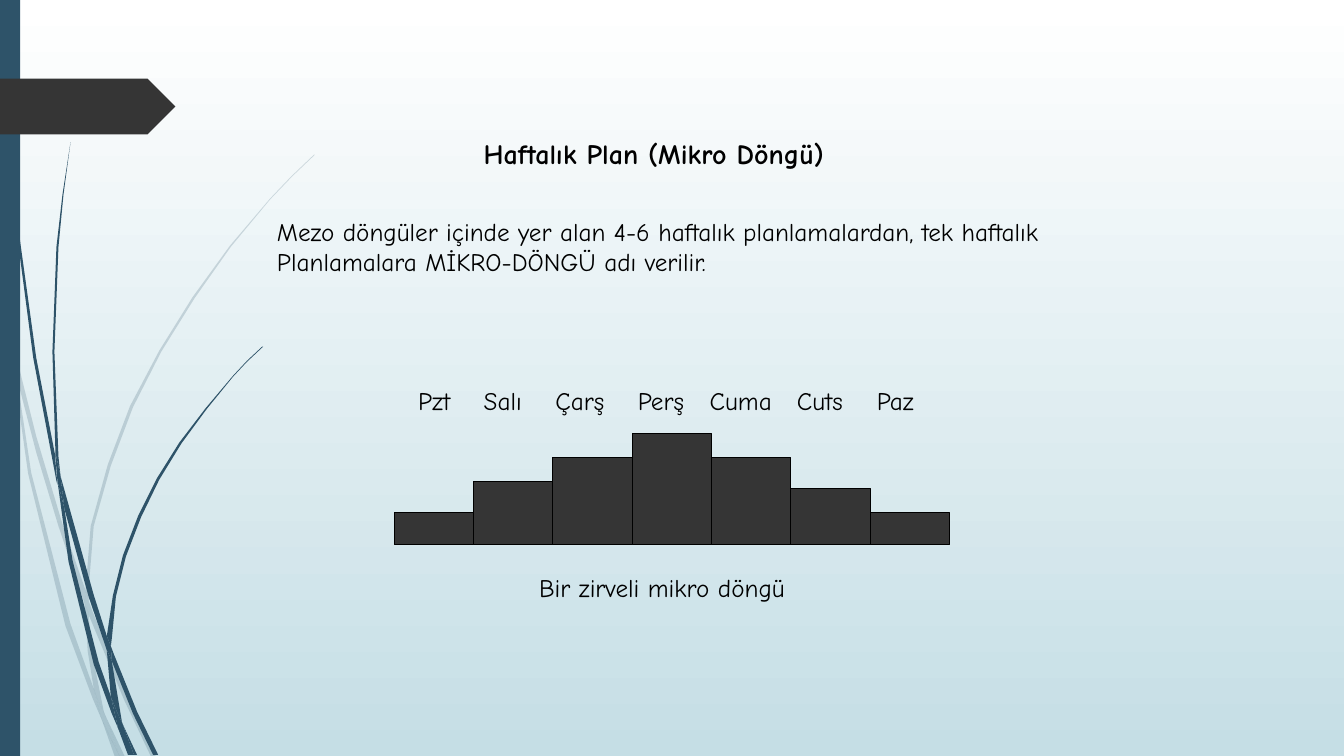
from lxml.etree import SubElement
from pptx import Presentation
from pptx.dml.color import RGBColor
from pptx.enum.shapes import MSO_SHAPE
from pptx.enum.text import MSO_ANCHOR, PP_ALIGN
from pptx.oxml.ns import qn
from pptx.util import Pt

COLOURS = {"top": "FFFFFF", "bottom": "C5DEE5", "blue": "2E5369",
           "dark": "353535", "text": "000000"}
FONT = "Comic Neue"

# Outlines of the grass pieces, in units of GRASS_UNIT
GRASS_UNIT = Pt(0.72)
PALE_GRASS = [
    [(11, 350), (9, 322), (0, 282), (0, 299), (10, 344)],
    [(58, 522), (84, 599), (85, 586), (62, 520), (36, 433), (14, 345), (17, 376), (36, 449)],
    [(92, 607), (88, 596), (88, 610), (123, 694), (150, 751), (155, 751), (127, 692)],
    [(119, 751), (124, 751), (105, 711)],
    [(93, 683), (70, 619), (31, 469), (17, 376), (11, 350), (28, 470), (65, 621),
     (92, 693), (101, 714), (99, 707)],
    [(84, 599), (87, 646), (93, 683), (96, 692), (105, 711), (103, 706), (91, 646),
     (88, 610), (88, 608)],
    [(88, 584), (93, 522), (110, 462), (132, 404), (160, 349), (193, 296), (229, 245),
     (268, 198), (290, 175), (312, 154), (312, 153), (289, 175), (268, 197), (228, 244),
     (191, 295), (158, 348), (129, 403), (107, 461), (90, 522), (85, 584), (85, 586),
     (88, 596)],
    [(101, 714), (114, 751), (119, 751)],
    [(88, 608), (88, 610), (88, 596), (85, 586), (84, 599)],
    [(96, 692), (93, 683), (99, 707), (101, 714), (119, 751), (105, 711)],
]
SOLID_GRASS = [
    [(7, 110), (17, 233), (33, 355), (56, 477), (57, 481), (55, 457), (55, 453),
     (36, 355), (19, 232), (8, 109), (5, 48), (4, 0), (3, 0), (4, 48)],
    [(88, 592), (106, 645), (106, 633), (106, 631), (93, 590), (60, 472), (64, 505)],
    [(113, 649), (110, 641), (111, 656), (132, 708), (152, 749), (157, 749), (136, 706)],
    [(110, 691), (98, 657), (72, 556), (64, 505), (57, 477), (68, 557), (93, 659),
     (111, 708), (117, 722), (116, 717)],
    [(60, 472), (58, 453), (54, 349), (58, 245), (63, 193), (70, 141), (62, 193),
     (56, 245), (52, 349), (55, 449)],
    [(133, 749), (136, 749), (122, 719)],
    [(57, 477), (64, 505), (60, 472), (55, 449), (55, 453)],
    [(111, 633), (115, 592), (125, 552), (140, 513), (158, 476), (180, 440), (205, 406),
     (231, 374), (245, 359), (261, 344), (260, 344), (245, 358), (231, 373), (204, 405),
     (178, 439), (156, 474), (137, 512), (122, 551), (112, 591), (106, 631), (110, 641)],
    [(117, 722), (127, 749), (131, 749)],
    [(106, 645), (110, 691), (116, 706), (122, 719), (121, 716), (111, 656), (109, 651)],
    [(106, 645), (109, 651), (111, 656), (110, 641), (106, 631), (106, 633)],
    [(116, 706), (110, 691), (116, 717), (117, 722), (130, 749), (133, 749), (122, 719)],
]


def paint(shape, colour, outlined=False):
    shape.shadow.inherit = False
    shape.fill.solid()
    shape.fill.fore_color.rgb = RGBColor.from_string(COLOURS[colour])
    if outlined:
        shape.line.color.rgb = RGBColor.from_string(COLOURS["text"])
        shape.line.width = Pt(0.75)
    else:
        shape.line.fill.background()


def write(shape, text, size, bold=False):
    frame = shape.text_frame
    frame.text = text
    frame.word_wrap = True
    frame.vertical_anchor = MSO_ANCHOR.TOP
    for paragraph in frame.paragraphs:
        paragraph.alignment = PP_ALIGN.LEFT
        for run in paragraph.runs:
            run.font.name = FONT
            run.font.size = Pt(size)
            run.font.bold = bold
            run.font.color.rgb = RGBColor.from_string(COLOURS["text"])


presentation = Presentation()
presentation.slide_width, presentation.slide_height = Pt(960), Pt(540)
slide = presentation.slides.add_slide(presentation.slide_layouts[5])
shapes = slide.shapes

background = slide.background.fill
background.gradient()
background.gradient_angle = 270
for stop, colour in zip(background.gradient_stops, ("top", "bottom")):
    stop.color.rgb = RGBColor.from_string(COLOURS[colour])

for outline in PALE_GRASS + SOLID_GRASS:
    builder = shapes.build_freeform(*outline[0], scale=GRASS_UNIT)
    builder.add_line_segments(outline[1:], close=True)
    grass = builder.convert_to_shape()
    paint(grass, "blue")
    if outline in PALE_GRASS:
        colour_element = next(grass.element.spPr.iter(qn("a:srgbClr")))
        SubElement(colour_element, qn("a:alpha"), val="20000")

side_band = shapes.add_shape(MSO_SHAPE.RECTANGLE, Pt(0), Pt(0), Pt(14.4), Pt(540))
paint(side_band, "blue")
arrow_tab = shapes.add_shape(MSO_SHAPE.PENTAGON, Pt(0), Pt(56.2), Pt(125.3), Pt(39.8))
paint(arrow_tab, "dark")

title = shapes.title
title.left, title.top, title.width, title.height = Pt(338.2), Pt(93.8), Pt(282.2), Pt(31)
write(title, "Haftalık Plan (Mikro Döngü)", 20, bold=True)

definition = shapes.add_textbox(Pt(190.8), Pt(150.9), Pt(607), Pt(50.4))
write(definition, "Mezo döngüler içinde yer alan 4-6 haftalık planlamalardan, tek haftalık\n"
                  "Planlamalara MİKRO-DÖNGÜ adı verilir.", 18)

# One load bar per day, standing on a shared base line
BAR_LEFT, BAR_WIDTH, BASE_LINE = 281.5, 56.7, 389
for day, load in enumerate([22.6, 45.3, 62.3, 79.4, 62.3, 39.9, 22.6]):
    bar = shapes.add_shape(MSO_SHAPE.RECTANGLE, Pt(BAR_LEFT + day * BAR_WIDTH),
                           Pt(BASE_LINE - load), Pt(BAR_WIDTH), Pt(load))
    paint(bar, "dark", outlined=True)

days = shapes.add_textbox(Pt(291.6), Pt(271.8), Pt(375), Pt(29))
write(days, "Pzt\tSalı\tÇarş\tPerş\tCuma\tCuts\tPaz", 18)
tab_list = SubElement(days.text_frame.paragraphs[0]._p.get_or_add_pPr(), qn("a:tabLst"))
for position in (46.8, 98, 157, 208.2, 270.5, 327.6):
    SubElement(tab_list, qn("a:tab"), pos=str(Pt(position)), algn="l")

caption = shapes.add_textbox(Pt(378), Pt(405.4), Pt(202.3), Pt(29))
write(caption, "Bir zirveli mikro döngü", 18)

presentation.save("out.pptx")
